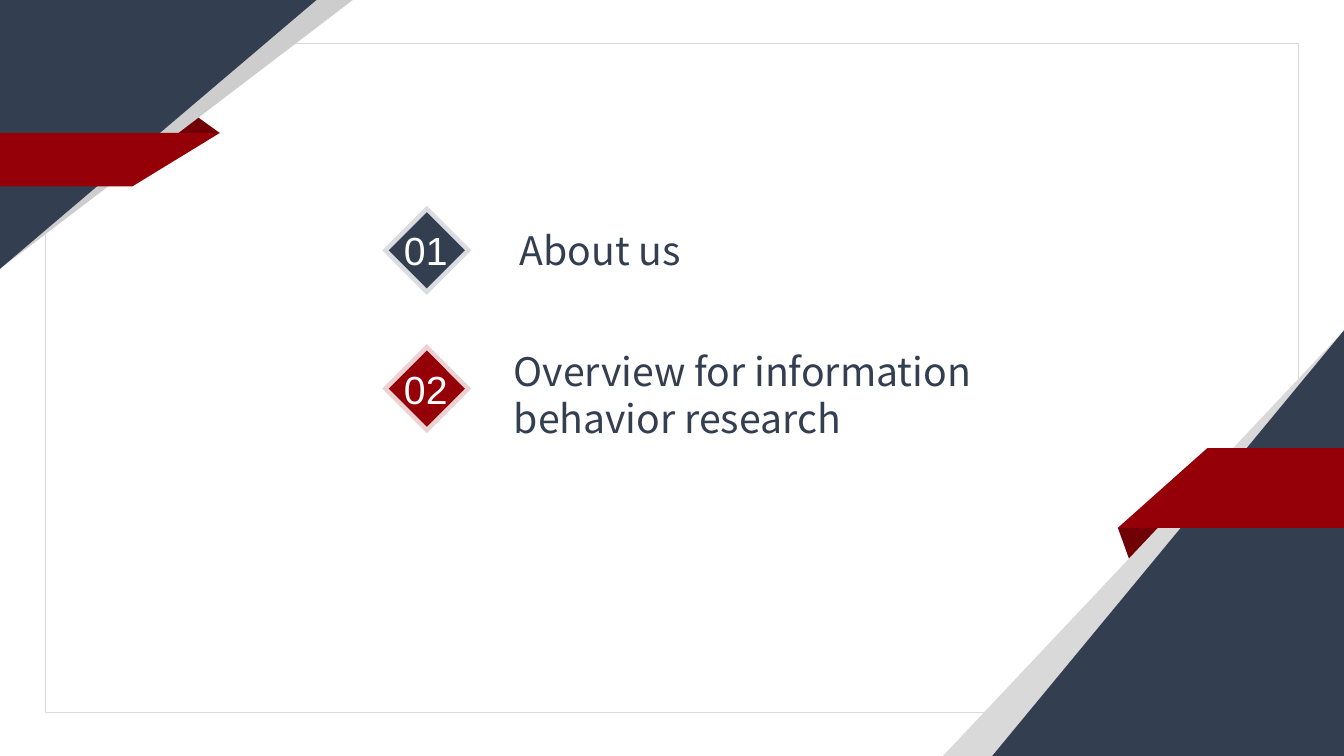
from lxml import etree
from pptx import Presentation
from pptx.dml.color import RGBColor
from pptx.enum.shapes import MSO_SHAPE
from pptx.enum.text import MSO_AUTO_SIZE, PP_ALIGN
from pptx.oxml.ns import qn
from pptx.util import Pt

RECT = MSO_SHAPE.RECTANGLE
TRIANGLE = MSO_SHAPE.RIGHT_TRIANGLE
GROW = MSO_AUTO_SIZE.SHAPE_TO_FIT_TEXT
LEFT, CENTER = PP_ALIGN.LEFT, PP_ALIGN.CENTER
W, H = 960, 540


def rgb(value):
    return RGBColor.from_string(value)


class Deck:
    NAVY, RED, DARK_RED = "333E50", "950008", "700005"
    SILVER, GRAY = "CDCDCD", "D9D9D9"
    BODY, DIGITS, SIZE = "Noto Sans CJK SC", "Arial", 28

    def __init__(self):
        self.prs = Presentation()
        self.prs.slide_width, self.prs.slide_height = Pt(W), Pt(H)
        self.s = self.prs.slides.add_slide(self.prs.slide_layouts[6])
        self.shapes = self.s.shapes

    def group(self):
        self.shapes = self.s.shapes.add_group_shape().shapes

    def ungroup(self):
        self.shapes = self.s.shapes

    def paint(self, sp, fill, alpha=None):
        sp.shadow.inherit = False
        sp.fill.solid()
        sp.fill.fore_color.rgb = rgb(fill)
        sp.line.fill.background()
        if alpha:
            clr = sp._element.spPr.find(qn("a:solidFill"))[0]
            etree.SubElement(clr, qn("a:alpha"), val=str(alpha * 1000))

    def frame(self, x, y, w, h):
        sp = self.shapes.add_shape(RECT, Pt(x), Pt(y), Pt(w), Pt(h))
        sp.shadow.inherit = False
        sp.fill.background()
        sp.line.color.rgb = rgb(self.GRAY)
        sp.line.width = Pt(1)

    def polygon(self, points, fill):
        start, *rest = [(Pt(x), Pt(y)) for x, y in points]
        fb = self.shapes.build_freeform(*start)
        fb.add_line_segments(rest, close=True)
        self.paint(fb.convert_to_shape(), fill)

    def corner(self, x, y, w, h, rotation, fill):
        left, top = x + (w - h) / 2, y + (h - w) / 2
        sp = self.shapes.add_shape(TRIANGLE, Pt(left), Pt(top), Pt(h), Pt(w))
        sp.rotation = rotation
        self.paint(sp, fill)

    def diamond(self, cx, cy, side, fill, alpha=None):
        sp = self.shapes.add_shape(
            RECT, Pt(cx - side / 2), Pt(cy - side / 2), Pt(side), Pt(side))
        sp.rotation = 315
        self.paint(sp, fill, alpha)

    def text(self, x, y, w, h, text, font, color, align=LEFT, wrap=False):
        tf = self.shapes.add_textbox(Pt(x), Pt(y), Pt(w), Pt(h)).text_frame
        tf.word_wrap = wrap
        tf.auto_size = GROW
        p = tf.paragraphs[0]
        p.text = text
        p.alignment = align
        p.font.name, p.font.size = font, Pt(self.SIZE)
        p.font.color.rgb = rgb(color)

    def badge(self, cy, number, fill):
        cx = 304.9
        self.diamond(cx, cy, 45, fill, 18)
        self.diamond(cx, cy, 38.5, fill)
        self.text(281.5, cy - 20.5, 47.5, 41, number, self.DIGITS, "FFFFFF")


def main():
    d = Deck()
    d.polygon([(105, 66), (123, 70.5), (157, 95), (105, 95)], d.DARK_RED)
    d.frame(32.4, 31, 895, 478)
    for w, fill in ((252, d.SILVER), (226, d.NAVY)):
        d.corner(0, 0, w, 192, 90, fill)
    d.polygon([(94.5, 133.2), (0, 133.2), (0, 95), (157, 95)], d.RED)

    d.group()
    d.polygon([(798.5, 377), (852.5, 377), (812, 414.5)], d.DARK_RED)
    for w, fill in ((286.5, d.GRAY), (251.3, d.NAVY)):
        d.corner(W - w, H - 304, w, 304, 270, fill)
    d.polygon([(862.5, 320), (W, 320), (W, 377), (798.5, 377)], d.RED)
    d.ungroup()

    d.badge(178.8, "01", d.NAVY)
    d.badge(277.6, "02", d.RED)
    d.text(360, 158.4, 137.5, 41, "About us", d.BODY, d.NAVY, CENTER)
    d.text(360, 244.8, 389.5, 75, "Overview for information behavior research",
           d.BODY, d.NAVY, wrap=True)
    d.prs.save("out.pptx")


if __name__ == "__main__":
    main()
